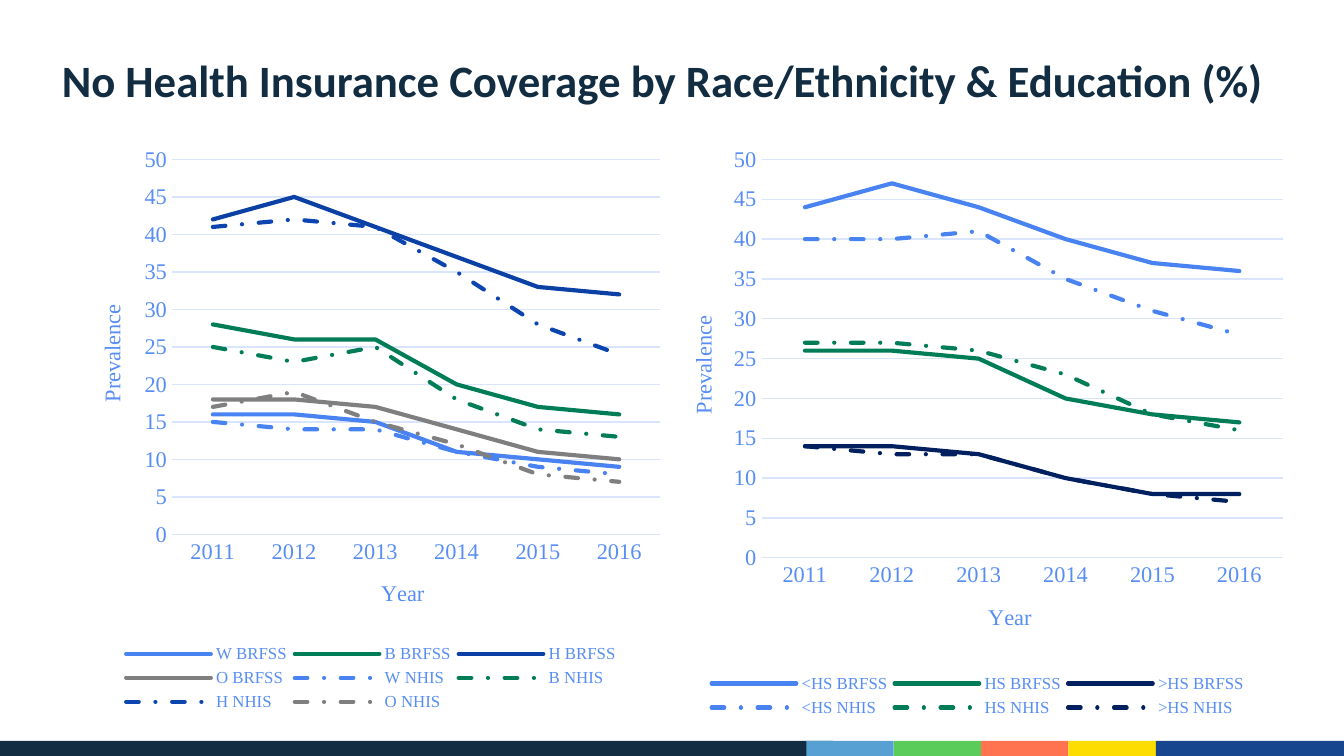
from dataclasses import dataclass

import pptx
import pptx.chart.data
import pptx.dml.color
import pptx.enum.chart
import pptx.enum.dml
import pptx.enum.shapes
import pptx.enum.text
import pptx.oxml
import pptx.oxml.ns
import pptx.util

WIDTH = 10
HEIGHT = WIDTH * 9 / 16
YEARS = ["2011", "2012", "2013", "2014", "2015", "2016"]


@dataclass(frozen=True)
class Theme:
    title_font: str = "Calibri"
    chart_font: str = "Times New Roman"
    title_size: int = 24
    axis_size: int = 12
    legend_size: int = 9
    series_width: float = 2.25
    grid_width: float = 0.75
    navy: str = "122C41"
    label: str = "588EF4"
    grid: str = "D8E5FC"
    light_blue: str = "4983F2"
    green: str = "007D57"
    blue: str = "0B41A5"
    bright_blue: str = "0D45B0"
    gray: str = "7F7F7F"
    dark_blue: str = "002060"
    strip: tuple = ("56A0D3", "5ACC5A", "FF7351", "FDDC00", "17468F")


THEME = Theme()

# Name, colour, whether dashed, values by year
RACE_SERIES = [
    ("W BRFSS", THEME.light_blue, False, (16, 16, 15, 11, 10, 9)),
    ("B BRFSS", THEME.green, False, (28, 26, 26, 20, 17, 16)),
    ("H BRFSS", THEME.blue, False, (42, 45, 41, 37, 33, 32)),
    ("O BRFSS", THEME.gray, False, (18, 18, 17, 14, 11, 10)),
    ("W NHIS", THEME.light_blue, True, (15, 14, 14, 11, 9, 8)),
    ("B NHIS", THEME.green, True, (25, 23, 25, 18, 14, 13)),
    ("H NHIS", THEME.bright_blue, True, (41, 42, 41, 35, 28, 24)),
    ("O NHIS", THEME.gray, True, (17, 19, 15, 12, 8, 7)),
]
EDUCATION_SERIES = [
    ("<HS BRFSS", THEME.light_blue, False, (44, 47, 44, 40, 37, 36)),
    ("HS BRFSS", THEME.green, False, (26, 26, 25, 20, 18, 17)),
    (">HS BRFSS", THEME.dark_blue, False, (14, 14, 13, 10, 8, 8)),
    ("<HS NHIS", THEME.light_blue, True, (40, 40, 41, 35, 31, 28)),
    ("HS NHIS", THEME.green, True, (27, 27, 26, 23, 18, 16)),
    (">HS NHIS", THEME.dark_blue, True, (14, 13, 13, 10, 8, 7)),
]

# Shares of the chart's own size
RACE_LAYOUT = {"plot": (0.17, 0.04, 0.81, 0.64), "year": (0.51, 0.75),
               "prevalence": (0.04, 0.28), "legend": (0.08, 0.86, 0.84, 0.13)}
EDUCATION_LAYOUT = {"plot": (0.16, 0.04, 0.82, 0.68), "year": (0.51, 0.79),
                    "prevalence": (0.04, 0.3), "legend": (0.07, 0.91, 0.86, 0.09)}


def rgb(color):
    return pptx.dml.color.RGBColor.from_string(color)


def box(x, y, w, h):
    """Turn shares of the slide's size into lengths."""
    return [pptx.util.Inches(share * side)
            for share, side in zip((x, y, w, h), (WIDTH, HEIGHT) * 2)]


def style_font(font, name, size, color, bold=False):
    font.name = name
    font.size = pptx.util.Pt(size)
    font.bold = bold
    font.color.rgb = rgb(color)


def style_line(line, color, width):
    line.color.rgb = rgb(color)
    line.width = pptx.util.Pt(width)


def place(element, shares, inner=False):
    """Give a chart part a manual layout in shares of the chart."""
    qn = pptx.oxml.ns.qn
    old = element.find(qn("c:layout"))
    if old is not None:
        element.remove(old)
    tags = '<c:layoutTarget val="inner"/>' if inner else ""
    tags += '<c:xMode val="edge"/><c:yMode val="edge"/>'
    tags += "".join(f'<c:{key} val="{share}"/>' for key, share in zip("xywh", shares))
    layout = pptx.oxml.parse_xml(
        f'<c:layout {pptx.oxml.ns.nsdecls("c")}>'
        f"<c:manualLayout>{tags}</c:manualLayout></c:layout>")
    overlay = element.find(qn("c:overlay"))
    if overlay is None:
        element.insert(0, layout)
    else:
        overlay.addprevious(layout)


def style_axis(axis, title, shares, rotation):
    axis.major_tick_mark = axis.minor_tick_mark = pptx.enum.chart.XL_TICK_MARK.NONE
    style_font(axis.tick_labels.font, THEME.chart_font, THEME.axis_size, THEME.label)
    tf = axis.axis_title.text_frame
    r = tf.paragraphs[0].add_run()
    r.text = title
    style_font(r.font, THEME.chart_font, THEME.axis_size, THEME.label)
    tf._txBody.find(pptx.oxml.ns.qn("a:bodyPr")).set("rot", str(rotation * 60000))
    place(axis.axis_title._element, shares)


def style_series(series, color, dashed):
    series.smooth = False
    series.marker.style = pptx.enum.chart.XL_MARKER_STYLE.NONE
    style_line(series.format.line, color, THEME.series_width)
    if dashed:
        series.format.line.dash_style = pptx.enum.dml.MSO_LINE.DASH_DOT
    series._element.find(".//" + pptx.oxml.ns.qn("a:ln")).set("cap", "rnd")


def add_line_chart(s, area, rows, layout):
    data = pptx.chart.data.CategoryChartData()
    data.categories = YEARS
    for name, _, _, values in rows:
        data.add_series(name, values)
    chart = s.shapes.add_chart(
        pptx.enum.chart.XL_CHART_TYPE.LINE, *box(*area), data).chart
    style_font(chart.font, THEME.chart_font, THEME.axis_size, THEME.label)
    chart.has_title = False
    plot = chart.plots[0]
    plot.vary_by_categories = False
    for series, (_, color, dashed, _) in zip(plot.series, rows):
        style_series(series, color, dashed)

    style_axis(chart.category_axis, "Year", layout["year"], 0)
    style_line(chart.category_axis.format.line, THEME.grid, THEME.grid_width)
    axis = chart.value_axis
    style_axis(axis, "Prevalence", layout["prevalence"], -90)
    axis.minimum_scale, axis.maximum_scale, axis.major_unit = 0, 50, 5
    axis.format.line.fill.background()
    style_line(axis.major_gridlines.format.line, THEME.grid, THEME.grid_width)

    chart.has_legend = True
    chart.legend.position = pptx.enum.chart.XL_LEGEND_POSITION.BOTTOM
    chart.legend.include_in_layout = False
    style_font(chart.legend.font, THEME.chart_font, THEME.legend_size, THEME.label)
    place(chart.legend._element, layout["legend"])
    place(chart._chartSpace.chart.plotArea, layout["plot"], inner=True)


def add_title(s, text):
    sp = s.shapes.title
    sp.left, sp.top, sp.width, sp.height = box(0.036, 0.06, 0.92, 0.09)
    tf = sp.text_frame
    tf.word_wrap = True
    tf.auto_size = pptx.enum.text.MSO_AUTO_SIZE.NONE
    tf.vertical_anchor = pptx.enum.text.MSO_ANCHOR.MIDDLE
    p = tf.paragraphs[0]
    p.alignment = pptx.enum.text.PP_ALIGN.LEFT
    r = p.add_run()
    r.text = text
    style_font(r.font, THEME.title_font, THEME.title_size, THEME.navy, bold=True)


def add_band(s, left, right, color):
    sp = s.shapes.add_shape(pptx.enum.shapes.MSO_SHAPE.RECTANGLE,
                            *box(left, 0.98, right - left, 0.02))
    sp.shadow.inherit = False
    sp.fill.solid()
    sp.fill.fore_color.rgb = rgb(color)
    sp.line.fill.background()


def add_footer_strip(s):
    start, end = 0.6, 0.86
    step = (end - start) / (len(THEME.strip) - 1)
    add_band(s, 0, 0.62, THEME.navy)
    for i, color in enumerate(THEME.strip):
        left = start + i * step
        add_band(s, left, 1 if color == THEME.strip[-1] else left + step, color)


def main():
    prs = pptx.Presentation()
    prs.slide_width = pptx.util.Inches(WIDTH)
    prs.slide_height = pptx.util.Inches(HEIGHT)
    s = prs.slides.add_slide(prs.slide_layouts[5])
    add_footer_strip(s)
    add_title(s, "No Health Insurance Coverage by Race/Ethnicity & Education (%)")
    add_line_chart(s, (0.052, 0.18, 0.448, 0.775), RACE_SERIES, RACE_LAYOUT)
    add_line_chart(s, (0.491, 0.18, 0.473, 0.775), EDUCATION_SERIES, EDUCATION_LAYOUT)
    prs.save("out.pptx")


if __name__ == "__main__":
    main()
